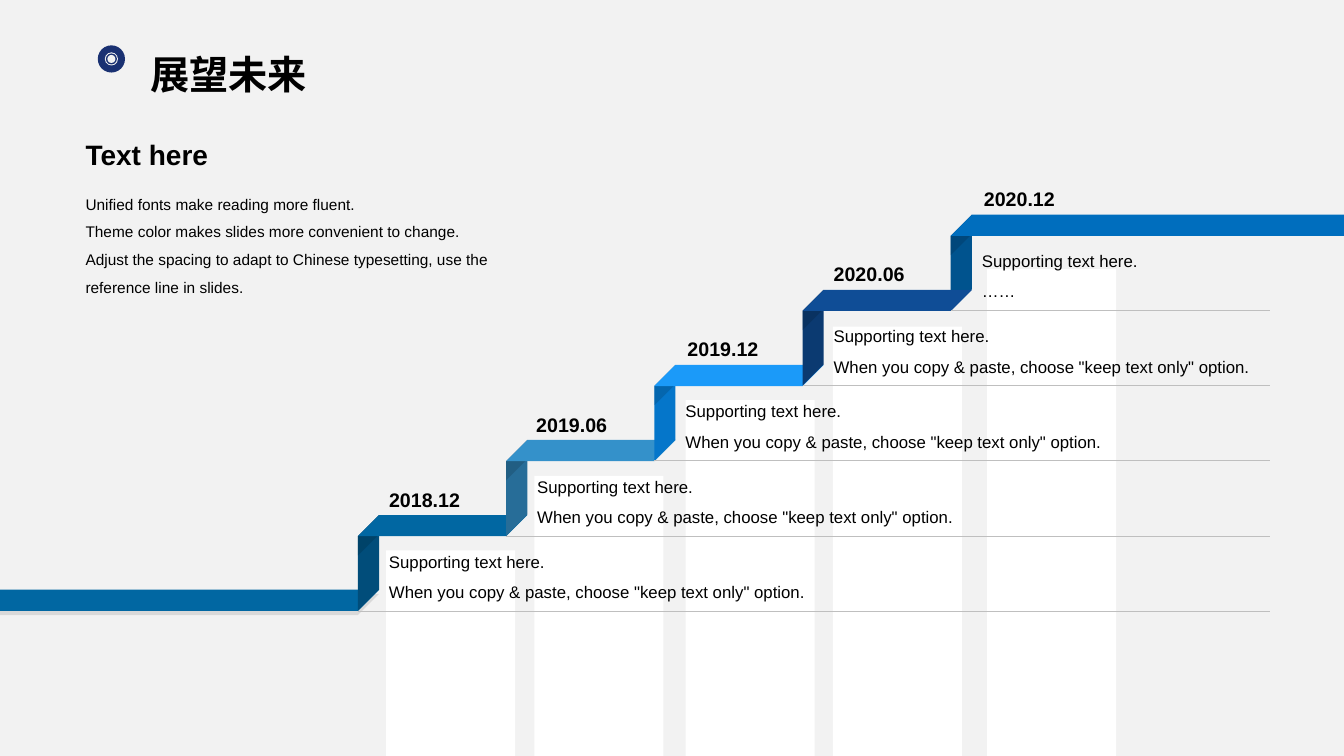
from dataclasses import dataclass

from lxml.etree import SubElement
from pptx import Presentation
from pptx.dml.color import RGBColor
from pptx.enum.shapes import MSO_CONNECTOR, MSO_SHAPE
from pptx.enum.text import MSO_ANCHOR, PP_ALIGN
from pptx.oxml.ns import qn
from pptx.util import Inches, Pt

# Content
TITLE = "展望未来"
HEADING = "Text here"
INTRO = [
    "Unified fonts make reading more fluent.",
    "Theme color makes slides more convenient to change.",
    "Adjust the spacing to adapt to Chinese typesetting, use the reference line in slides.",
]
SUPPORT = "Supporting text here."
ADVICE = 'When you copy & paste, choose "keep text only" option.'
# date, second line, tread, riser, shade, date left, column left, column top
STEPS = [
    ("2018.12", ADVICE, "0167A2", "014D7A", "003451", 3.76, 3.83, 5.46),
    ("2019.06", ADVICE, "3491CA", "276D98", "1A4865", 5.22, 5.30, 4.72),
    ("2019.12", ADVICE, "1B9AF9", "0576CA", "044E86", 6.72, 6.80, 3.97),
    ("2020.06", ADVICE, "0F4D96", "0B3A71", "08264B", 8.17, 8.26, 3.24),
    ("2020.12", "……", "006EBE", "00538E", "00375F", 9.66, 9.79, 2.67),
]
BOOK_COVER = [
    (0.60, 0.53), (0.65, 0.515), (0.71, 0.51), (0.80, 0.525), (0.88, 0.57),
    (0.92, 0.54), (0.97, 0.52), (0.96, 0.54), (0.89, 0.58), (0.89, 0.80),
    (0.88, 0.78), (0.88, 0.94), (0.96, 0.92), (1.05, 0.91), (1.13, 0.92),
    (1.13, 0.73), (1.18, 0.72), (1.18, 0.97), (0.92, 0.97), (0.88, 0.99),
    (0.84, 0.97), (0.57, 0.97), (0.57, 0.59), (0.60, 0.57),
]
BOOK_PAGE = [
    (0.71, 0.53), (0.66, 0.535), (0.62, 0.55), (0.62, 0.92), (0.70, 0.91),
    (0.79, 0.92), (0.87, 0.94), (0.87, 0.78), (0.86, 0.80), (0.86, 0.58),
    (0.79, 0.54),
]


@dataclass(frozen=True)
class Theme:
    font: str = "Arial"
    background: str = "F2F2F2"
    text: str = "000000"
    column: str = "FFFFFF"
    rule: str = "BFBFBF"
    icon: str = "1A3172"
    title_size: int = 28
    heading_size: int = 20
    date_size: int = 14
    support_size: int = 12
    intro_size: int = 11


THEME = Theme()

# Staircase geometry
FIRST_LEFT, FIRST_TOP = 3.55, 5.11
RUN, RISE = 1.47, 0.745
BAND = 0.21
RISER_LENGTH, SHADE_LENGTH = 0.95, 0.40
TREAD_WIDTH, LAST_TREAD_WIDTH = 1.68, 4.13
COLUMN_WIDTH = 1.28
RULE_RIGHT, SLIDE_BOTTOM = 12.6, 7.5


def paint(shape, color):
    shape.shadow.inherit = False
    shape.fill.solid()
    shape.fill.fore_color.rgb = RGBColor.from_string(color)
    shape.line.fill.background()


def add_solid(slide, kind, left, top, width, height, color):
    shape = slide.shapes.add_shape(
        kind, Inches(left), Inches(top), Inches(width), Inches(height))
    paint(shape, color)
    return shape


def add_band(slide, left, top, width, color):
    band = add_solid(slide, MSO_SHAPE.PARALLELOGRAM, left, top, width, BAND, color)
    band.adjustments[0] = 1
    return band


def add_upright_band(slide, left, top, length, color):
    """Place a band turned upright, with left and top as its visible corner."""
    shift = (length - BAND) / 2
    band = add_band(slide, left - shift, top + shift, length, color)
    band.rotation = 90
    band._element.spPr.find(qn("a:xfrm")).set("flipH", "1")
    return band


def set_alpha(color_element, percent):
    SubElement(color_element, qn("a:alpha"), val=str(percent * 1000))


def write(frame, lines, size, bold=False, spacing=None):
    for index, line in enumerate(lines):
        paragraph = frame.paragraphs[0] if index == 0 else frame.add_paragraph()
        paragraph.text = line
        paragraph.alignment = PP_ALIGN.LEFT
        paragraph.line_spacing = spacing
        paragraph.font.name = THEME.font
        paragraph.font.size = Pt(size)
        paragraph.font.bold = bold
        paragraph.font.color.rgb = RGBColor.from_string(THEME.text)


def add_text(slide, left, top, width, height, lines, size, wrap=True, **style):
    box = slide.shapes.add_textbox(
        Inches(left), Inches(top), Inches(width), Inches(height))
    box.text_frame.word_wrap = wrap
    write(box.text_frame, lines, size, **style)
    return box


def add_title(slide):
    title = slide.shapes.title
    title.left, title.top = Inches(1.39), Inches(0.29)
    title.width, title.height = Inches(11.87), Inches(0.73)
    title.text_frame.vertical_anchor = MSO_ANCHOR.BOTTOM
    write(title.text_frame, [TITLE], THEME.title_size, bold=True, spacing=0.9)


def add_book_icon(slide):
    builder = slide.shapes.build_freeform(*BOOK_COVER[0], scale=Inches(1))
    builder.add_line_segments(BOOK_COVER[1:])
    builder.move_to(*BOOK_PAGE[0])
    builder.add_line_segments(BOOK_PAGE[1:])
    paint(builder.convert_to_shape(), THEME.icon)
    center_x, center_y = 1.105, 0.585
    for radius, color in ((0.135, THEME.icon), (0.065, THEME.background),
                          (0.055, THEME.icon), (0.04, THEME.background)):
        add_solid(slide, MSO_SHAPE.OVAL, center_x - radius, center_y - radius,
                  2 * radius, 2 * radius, color)


def add_ground(slide):
    ground = add_band(slide, -0.22, FIRST_TOP + 0.74, 3.98, STEPS[0][2])
    effects = ground._element.spPr.find(qn("a:effectLst"))
    shadow = SubElement(effects, qn("a:outerShdw"), blurRad="0",
                        dist=str(Pt(3)), dir="5400000", algn="t", rotWithShape="0")
    set_alpha(SubElement(shadow, qn("a:srgbClr"), val="000000"), 10)


def add_rule(slide, left, top):
    rule = slide.shapes.add_connector(
        MSO_CONNECTOR.STRAIGHT, Inches(left), Inches(top), Inches(RULE_RIGHT), Inches(top))
    rule.line.color.rgb = RGBColor.from_string(THEME.rule)
    rule.line.width = Pt(0.25)
    SubElement(rule._element.spPr, qn("a:effectLst"))


def main():
    presentation = Presentation()
    presentation.slide_width, presentation.slide_height = Inches(13.33), Inches(7.5)
    slide = presentation.slides.add_slide(presentation.slide_layouts[5])
    slide.background.fill.solid()
    slide.background.fill.fore_color.rgb = RGBColor.from_string(THEME.background)

    # Title and icon
    add_title(slide)
    add_book_icon(slide)

    # White columns behind the stairs
    for *_, left, top in STEPS:
        add_solid(slide, MSO_SHAPE.RECTANGLE, left, top, COLUMN_WIDTH,
                  SLIDE_BOTTOM - top, THEME.column)

    # Folded ribbon; the fourth tread lies over the last riser
    add_ground(slide)
    corners = [(FIRST_LEFT + RUN * i, FIRST_TOP - RISE * i) for i in range(len(STEPS))]
    for index in (0, 1, 2, 4, 3):
        left, top = corners[index]
        _, _, tread, riser, shade, *_ = STEPS[index]
        add_upright_band(slide, left, top, RISER_LENGTH, riser)
        fold = add_upright_band(slide, left, top, SHADE_LENGTH, shade)
        set_alpha(fold._element.spPr.find(qn("a:solidFill"))[0], 40)
        width = LAST_TREAD_WIDTH if index == len(STEPS) - 1 else TREAD_WIDTH
        add_band(slide, left, top, width, tread)

    # Introduction
    add_text(slide, 0.75, 1.79, 4.76, 1.59, INTRO, THEME.intro_size, spacing=1.5)
    add_text(slide, 0.75, 1.31, 4.76, 0.48, [HEADING], THEME.heading_size,
             wrap=False, bold=True)

    # Dates, supporting text and rules
    for (left, top), (date, detail, _, _, _, date_left, _, _) in zip(corners, STEPS):
        label = add_text(slide, date_left, top - 0.45, 1.45, 0.45, [date],
                         THEME.date_size, wrap=False, bold=True)
        label.text_frame.vertical_anchor = MSO_ANCHOR.BOTTOM
        label.text_frame.margin_bottom = Inches(0.04)
        text_left = left + BAND
        add_text(slide, text_left, top + BAND, RULE_RIGHT - text_left, 0.89,
                 [SUPPORT, detail], THEME.support_size, spacing=1.5)
        add_rule(slide, left, top + RISER_LENGTH)

    presentation.save("out.pptx")


if __name__ == "__main__":
    main()
